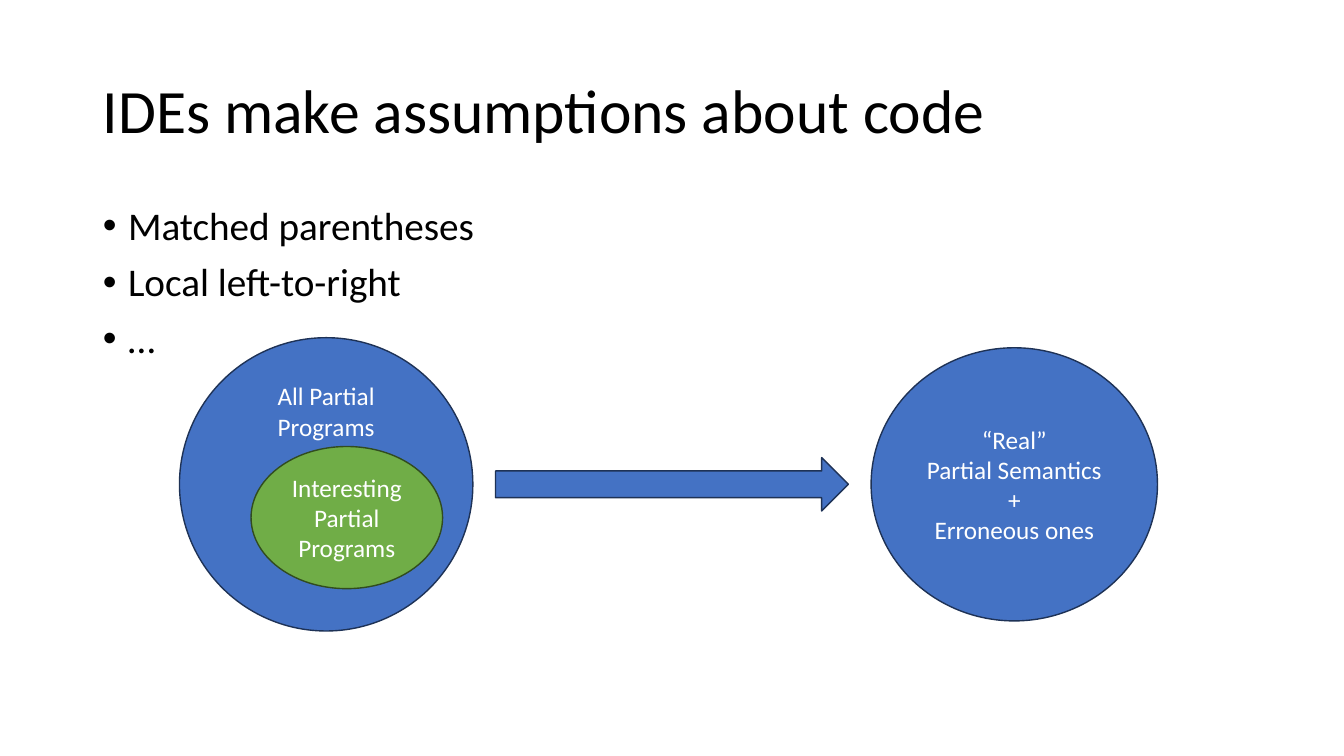
from pptx import Presentation
from pptx.dml.color import RGBColor
from pptx.enum.shapes import MSO_SHAPE
from pptx.enum.text import MSO_ANCHOR, PP_ALIGN
from pptx.util import Inches, Pt

ELLIPSE, ARROW = MSO_SHAPE.OVAL, MSO_SHAPE.RIGHT_ARROW
TOP, MIDDLE = MSO_ANCHOR.TOP, MSO_ANCHOR.MIDDLE
LEFT, CENTER = PP_ALIGN.LEFT, PP_ALIGN.CENTER
TITLE_AND_CONTENT = 1
FONT = "Calibri"
BLACK, WHITE = "000000", "FFFFFF"
BLUE, NAVY = "4472C4", "1E3256"
GREEN, DARK_GREEN = "70AD47", "314C1F"


def color(hex_string):
    return RGBColor.from_string(hex_string)


def place(item, box):
    item.left, item.top, item.width, item.height = map(Inches, box)


def write(frame, lines, size, text_color, align, anchor):
    """Fill a text frame with one paragraph per line."""
    frame.word_wrap = True
    frame.vertical_anchor = anchor
    for i, line in enumerate(lines):
        paragraph = frame.add_paragraph() if i else frame.paragraphs[0]
        paragraph.alignment = align
        run = paragraph.add_run()
        run.text = line
        run.font.name = FONT
        run.font.size = Pt(size)
        run.font.color.rgb = color(text_color)
    return frame.paragraphs


def add_heading(slide, box):
    heading = slide.shapes.title
    place(heading, box)
    lines = write(heading.text_frame, ["IDEs make assumptions about code"],
                  44, BLACK, LEFT, MIDDLE)
    lines[0].line_spacing = 0.9


def add_assumptions(slide, box):
    assumptions = slide.placeholders[1]
    place(assumptions, box)
    bullets = write(assumptions.text_frame,
                    ["Matched parentheses", "Local left-to-right", "…"],
                    28, BLACK, LEFT, TOP)
    for bullet in bullets:
        bullet.line_spacing = 0.9
        bullet.space_before = Pt(10)
        # Hanging indent for the inherited bullet
        properties = bullet._p.get_or_add_pPr()
        properties.set("marL", str(Inches(0.25)))
        properties.set("indent", str(-Inches(0.25)))


def add_figure(slide, preset, box, fill, outline, lines=(), anchor=MIDDLE):
    figure = slide.shapes.add_shape(preset, *map(Inches, box))
    figure.shadow.inherit = False
    figure.fill.solid()
    figure.fill.fore_color.rgb = color(fill)
    figure.line.color.rgb = color(outline)
    figure.line.width = Pt(1)
    write(figure.text_frame, lines, 18, WHITE, CENTER, anchor)
    return figure


def add_semantics_diagram(slide, box):
    x, y, width, height = box
    middle = y + height / 2

    # Source set, its label at the top to clear the inner set
    all_programs = add_figure(slide, ELLIPSE, (x, y, height, height), BLUE, NAVY,
                              ["All Partial Programs"], TOP)
    all_programs.text_frame.margin_top = 0

    # Target set
    target_width, target_height = 2.84, 2.71
    add_figure(slide, ELLIPSE,
               (x + width - target_width, middle - target_height / 2,
                target_width, target_height), BLUE, NAVY,
               ["“Real”", "Partial Semantics", "+", "Erroneous ones"])

    # Inner set
    add_figure(slide, ELLIPSE, (x + 0.71, y + 1.08, 1.9, 1.41), GREEN, DARK_GREEN,
               ["Interesting Partial Programs"])

    # Mapping from source to target, centred in the gap
    arrow_width, arrow_height = 3.5, 0.53
    gap = width - height - target_width
    add_figure(slide, ARROW,
               (x + height + (gap - arrow_width) / 2, middle - arrow_height / 2,
                arrow_width, arrow_height), BLUE, NAVY)


def main():
    deck = Presentation()
    deck.slide_width, deck.slide_height = Inches(13.33), Inches(7.5)
    slide = deck.slides.add_slide(deck.slide_layouts[TITLE_AND_CONTENT])
    add_heading(slide, (0.92, 0.4, 11.5, 1.45))
    add_assumptions(slide, (0.92, 2, 11.5, 4.76))
    add_semantics_diagram(slide, (1.78, 3.35, 9.7, 2.91))
    deck.save("out.pptx")


if __name__ == "__main__":
    main()
